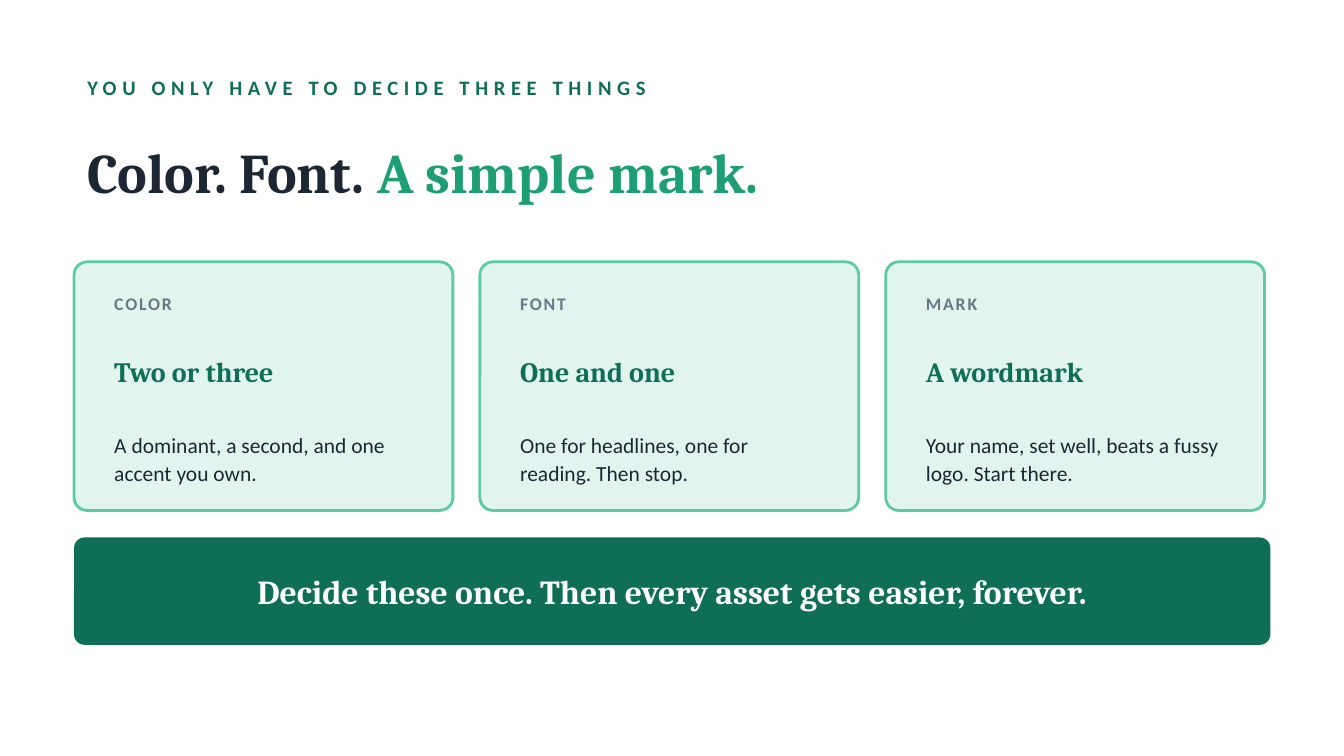
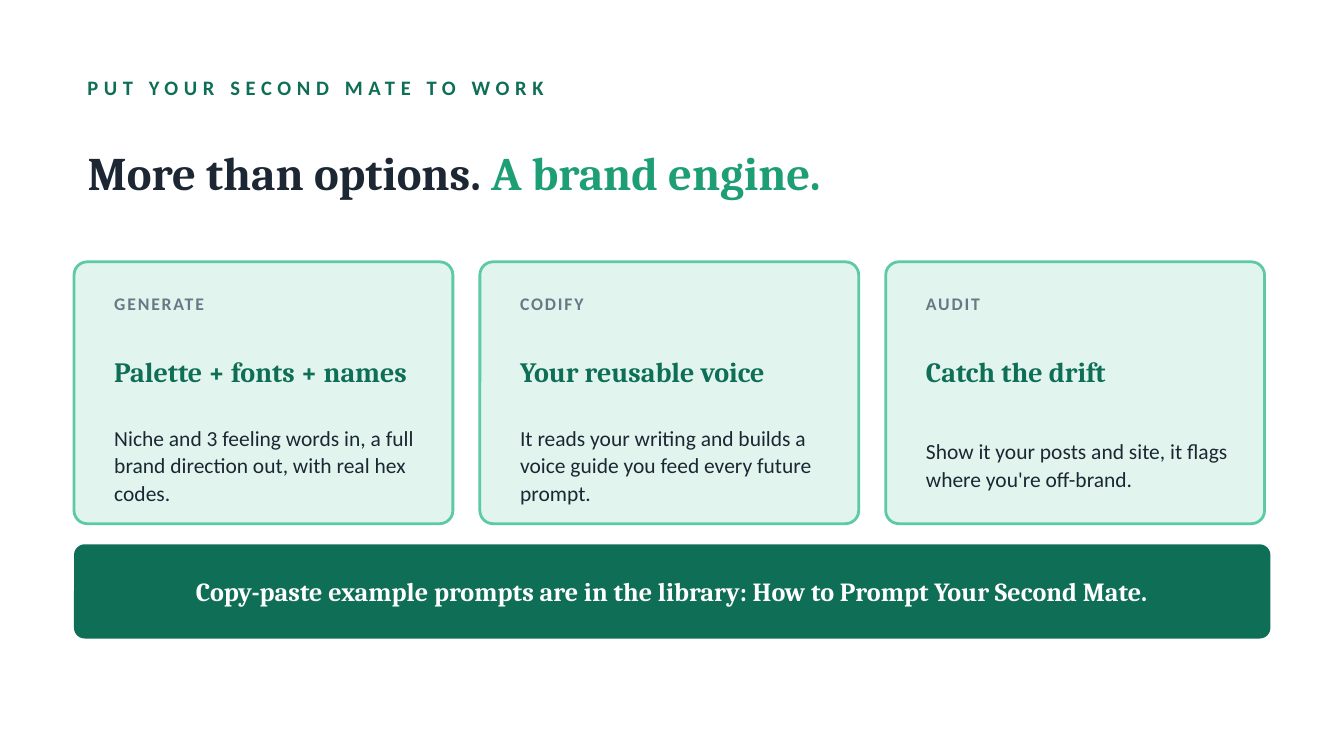
from pptx import Presentation
from pptx.dml.color import RGBColor
from pptx.enum.shapes import MSO_SHAPE as Preset
from pptx.enum.text import MSO_ANCHOR as Anchor, MSO_AUTO_SIZE as AutoSize, PP_ALIGN as Align
from pptx.util import Cm, Pt

# Shared style
INK, GREEN, ACCENT, GRAY = "1C2733", "0F6E56", "1D9E75", "6B7785"
PALE, MINT, WHITE = "E1F5EE", "5DCAA5", "FFFFFF"
SERIF, SANS = "Cambria", "Calibri"

EYEBROW = dict(name=SANS, size=Pt(11), bold=True, color=GREEN, tracking=3)
HEADLINE = dict(name=SERIF, bold=True, color=INK)
CARD_LABEL = dict(name=SANS, size=Pt(9.5), bold=True, color=GRAY, tracking=1)
CARD_TITLE = dict(name=SERIF, size=Pt(15), bold=True, color=GREEN)
CARD_BODY = dict(name=SANS, size=Pt(11.5), color=INK)
BANNER = dict(name=SERIF, bold=True, color=WHITE)

# Shared layout, in centimetres
LEFT, WIDTH = 1.4, 22.61
CARD_TOP, CARD_WIDTH, CARD_STEP, CARD_INSET = 4.95, 7.16, 7.67, 0.51
CARD_TEXT_WIDTH = 6.22
BODY_TOP = 7.95


def rgb(value):
    return RGBColor.from_string(value)


class Deck:
    """Holds the presentation, its style and the current slide."""

    def __init__(self):
        self.presentation = Presentation()
        self.presentation.slide_width = Cm(25.4)
        self.presentation.slide_height = Cm(14.29)
        self.slide = None

    def new_slide(self):
        layout = self.presentation.slide_layouts.get_by_name("Title Only")
        self.slide = self.presentation.slides.add_slide(layout)

    def fill_text(self, frame, runs, align=Align.LEFT, line_spacing=None):
        """Fill a text frame with one paragraph of (text, style) runs."""
        frame.word_wrap = True
        frame.auto_size = AutoSize.NONE
        frame.vertical_anchor = Anchor.MIDDLE
        paragraph = frame.paragraphs[0]
        paragraph.alignment = align
        paragraph.line_spacing = line_spacing
        for text, style in runs:
            run = paragraph.add_run()
            run.text = text
            for key, value in style.items():
                if key == "color":
                    run.font.color.rgb = rgb(value)
                elif key == "tracking":
                    run._r.get_or_add_rPr().set("spc", str(value * 100))
                else:
                    setattr(run.font, key, value)

    def title(self, plain, accent, size):
        shape = self.slide.shapes.title
        box = dict(left=LEFT, top=2.16, width=WIDTH, height=2.16)
        for key, value in box.items():
            setattr(shape, key, Cm(value))
        style = HEADLINE | dict(size=Pt(size))
        self.fill_text(shape.text_frame,
                       [(plain, style), (accent, style | dict(color=ACCENT))])

    def text(self, left, top, width, height, text, style, line_spacing=None):
        shape = self.slide.shapes.add_textbox(*map(Cm, (left, top, width, height)))
        self.fill_text(shape.text_frame, [(text, style)], line_spacing=line_spacing)

    def panel(self, left, top, width, height, radius, fill, line=None):
        shape = self.slide.shapes.add_shape(
            Preset.ROUNDED_RECTANGLE, *map(Cm, (left, top, width, height)))
        shape.adjustments[0] = radius / min(width, height)
        shape.shadow.inherit = False
        shape.fill.solid()
        shape.fill.fore_color.rgb = rgb(fill)
        if line:
            shape.line.color.rgb = rgb(line)
            shape.line.width = Pt(1.5)
        else:
            shape.line.fill.background()
        return shape

    def card(self, column, height, label, title, body):
        left = LEFT + column * CARD_STEP
        self.panel(left, CARD_TOP, CARD_WIDTH, height, 0.25, PALE, MINT)
        left += CARD_INSET
        self.text(left, 5.36, CARD_TEXT_WIDTH, 0.76, label, CARD_LABEL)
        self.text(left, 6.12, CARD_TEXT_WIDTH, 1.78, title, CARD_TITLE)
        body_height = CARD_TOP + height - 0.3 - BODY_TOP
        self.text(left, BODY_TOP, CARD_TEXT_WIDTH, body_height, body, CARD_BODY, 1.08)

    def banner(self, top, height, text, size):
        shape = self.panel(LEFT, top, WIDTH, height, 0.2, GREEN)
        self.fill_text(shape.text_frame, [(text, BANNER | dict(size=Pt(size)))], Align.CENTER)


SLIDES = [
    dict(
        eyebrow="YOU ONLY HAVE TO DECIDE THREE THINGS",
        title=("Color. Font. ", "A simple mark.", 30),
        card_height=4.7,
        cards=[
            ("COLOR", "Two or three", "A dominant, a second, and one accent you own."),
            ("FONT", "One and one", "One for headlines, one for reading. Then stop."),
            ("MARK", "A wordmark", "Your name, set well, beats a fussy logo. Start there."),
        ],
        banner=(10.16, 2.03, "Decide these once. Then every asset gets easier, forever.", 18),
    ),
    dict(
        eyebrow="PUT YOUR SECOND MATE TO WORK",
        title=("More than options. ", "A brand engine.", 25),
        card_height=4.95,
        cards=[
            ("GENERATE", "Palette + fonts + names",
             "Niche and 3 feeling words in, a full brand direction out, with real hex codes."),
            ("CODIFY", "Your reusable voice",
             "It reads your writing and builds a voice guide you feed every future prompt."),
            ("AUDIT", "Catch the drift",
             "Show it your posts and site, it flags where you're off-brand."),
        ],
        banner=(10.29, 1.78, "Copy-paste example prompts are in the library: "
                "How to Prompt Your Second Mate.", 14),
    ),
]


def main():
    deck = Deck()
    for content in SLIDES:
        deck.new_slide()
        # Heading
        deck.text(LEFT, 1.27, WIDTH, 0.76, content["eyebrow"], EYEBROW)
        deck.title(*content["title"])
        # Three cards
        for column, card in enumerate(content["cards"]):
            deck.card(column, content["card_height"], *card)
        # Closing banner
        deck.banner(*content["banner"])
    deck.presentation.save("out.pptx")


if __name__ == "__main__":
    main()
